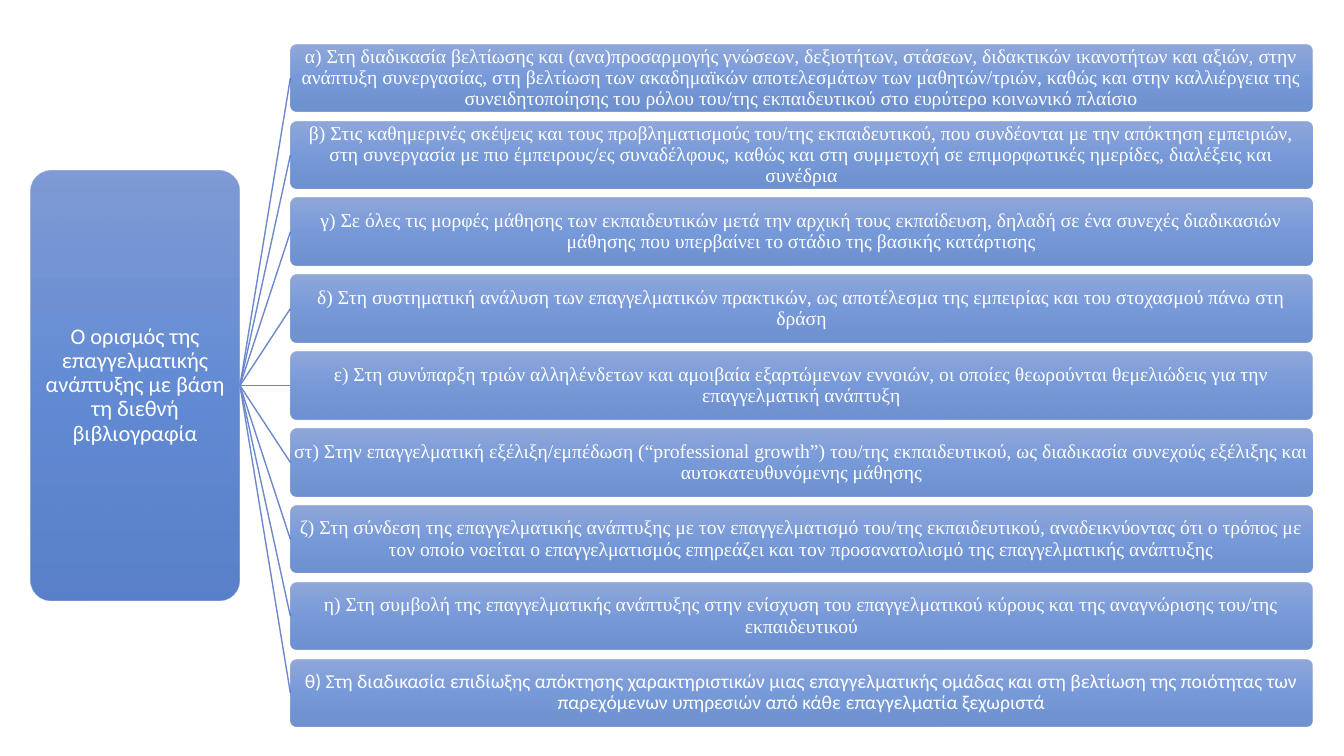
from lxml import etree
from pptx import Presentation
from pptx.dml.color import RGBColor
from pptx.enum import shapes, text
from pptx.oxml import ns
from pptx.util import Inches, Pt

TOPIC = "Ο ορισμός της επαγγελματικής ανάπτυξης με βάση τη διεθνή βιβλιογραφία"
DEFINITIONS = [
    "α) Στη διαδικασία βελτίωσης και (ανα)προσαρμογής γνώσεων, δεξιοτήτων, στάσεων, "
    "διδακτικών ικανοτήτων και αξιών, στην ανάπτυξη συνεργασίας, στη βελτίωση των "
    "ακαδημαϊκών αποτελεσμάτων των μαθητών/τριών, καθώς και στην καλλιέργεια της "
    "συνειδητοποίησης του ρόλου του/της εκπαιδευτικού στο ευρύτερο κοινωνικό πλαίσιο",
    "β) Στις καθημερινές σκέψεις και τους προβληματισμούς του/της εκπαιδευτικού, που "
    "συνδέονται με την απόκτηση εμπειριών, στη συνεργασία με πιο έμπειρους/ες "
    "συναδέλφους, καθώς και στη συμμετοχή σε επιμορφωτικές ημερίδες, διαλέξεις και συνέδρια",
    "γ) Σε όλες τις μορφές μάθησης των εκπαιδευτικών μετά την αρχική τους εκπαίδευση, "
    "δηλαδή σε ένα συνεχές διαδικασιών μάθησης που υπερβαίνει το στάδιο της βασικής κατάρτισης",
    "δ) Στη συστηματική ανάλυση των επαγγελματικών πρακτικών, ως αποτέλεσμα της "
    "εμπειρίας και του στοχασμού πάνω στη δράση",
    "ε) Στη συνύπαρξη τριών αλληλένδετων και αμοιβαία εξαρτώμενων εννοιών, οι οποίες "
    "θεωρούνται θεμελιώδεις για την επαγγελματική ανάπτυξη",
    "στ) Στην επαγγελματική εξέλιξη/εμπέδωση (“professional growth”) του/της "
    "εκπαιδευτικού, ως διαδικασία συνεχούς εξέλιξης και αυτοκατευθυνόμενης μάθησης",
    "ζ) Στη σύνδεση της επαγγελματικής ανάπτυξης με τον επαγγελματισμό του/της "
    "εκπαιδευτικού, αναδεικνύοντας ότι ο τρόπος με τον οποίο νοείται ο επαγγελματισμός "
    "επηρεάζει και τον προσανατολισμό της επαγγελματικής ανάπτυξης",
    "η) Στη συμβολή της επαγγελματικής ανάπτυξης στην ενίσχυση του επαγγελματικού "
    "κύρους και της αναγνώρισης του/της εκπαιδευτικού",
    "θ) Στη διαδικασία επιδίωξης απόκτησης χαρακτηριστικών μιας επαγγελματικής ομάδας "
    "και στη βελτίωση της ποιότητας των παρεχόμενων υπηρεσιών από κάθε επαγγελματία ξεχωριστά",
]

GRADIENT = [(0, "6183CB"), (50, "3E70CA"), (100, "3062BB")]
TOPIC_LEFT, TOPIC_TOP, TOPIC_WIDTH, TOPIC_HEIGHT = 0.3, 1.69, 2.08, 4.27
ROW_LEFT, ROW_WIDTH, ROW_HEIGHT = 2.88, 10.14, 0.67
FIRST_TOP, LAST_TOP = 0.44, 6.54


def color(value):
    return RGBColor.from_string(value)


def fill_gradient(box, opacity):
    """Fill from top to bottom with the three blues at one opacity percentage."""
    box.fill.gradient()
    box.fill.gradient_angle = 270
    stops = box._element.spPr.find(ns.qn("a:gradFill")).find(ns.qn("a:gsLst"))
    for stop in list(stops):
        stops.remove(stop)
    for position, value in GRADIENT:
        stop = etree.SubElement(stops, ns.qn("a:gs"), pos=str(position * 1000))
        shade = etree.SubElement(stop, ns.qn("a:srgbClr"), val=value)
        etree.SubElement(shade, ns.qn("a:alpha"), val=str(opacity * 1000))


def add_box(page, words, left, top, width, height, opacity, font, size):
    box = page.shapes.add_shape(
        shapes.MSO_SHAPE.ROUNDED_RECTANGLE,
        Inches(left), Inches(top), Inches(width), Inches(height))
    box.adjustments[0] = 0.1
    box.shadow.inherit = False
    box.line.fill.background()
    fill_gradient(box, opacity)
    frame = box.text_frame
    frame.word_wrap = True
    frame.vertical_anchor = text.MSO_ANCHOR.MIDDLE
    frame.margin_left = frame.margin_right = Inches(0.01)
    frame.margin_top = frame.margin_bottom = Inches(0.01)
    para = frame.paragraphs[0]
    para.text = words
    para.alignment = text.PP_ALIGN.CENTER
    para.line_spacing = 0.9
    para.font.name = font
    para.font.size = Pt(size)
    para.font.color.rgb = color("FFFFFF")


def add_branch(page, end_y):
    """Join the right edge of the topic to the left edge of a row."""
    branch = page.shapes.add_connector(
        shapes.MSO_CONNECTOR.STRAIGHT,
        Inches(TOPIC_LEFT + TOPIC_WIDTH), Inches(TOPIC_TOP + TOPIC_HEIGHT / 2),
        Inches(ROW_LEFT), Inches(end_y))
    branch.line.color.rgb = color("6D89CB")
    branch.line.width = Pt(1)
    etree.SubElement(branch._element.spPr, ns.qn("a:effectLst"))


def main():
    deck = Presentation()
    deck.slide_width, deck.slide_height = Inches(13.33), Inches(7.5)
    page = deck.slides.add_slide(deck.slide_layouts[6])

    add_box(page, TOPIC, TOPIC_LEFT, TOPIC_TOP, TOPIC_WIDTH, TOPIC_HEIGHT,
            80, "Calibri", 16)
    last = len(DEFINITIONS) - 1
    pitch = (LAST_TOP - FIRST_TOP) / last
    for index, definition in enumerate(DEFINITIONS):
        top = FIRST_TOP + index * pitch
        font = "Calibri" if index == last else "Times New Roman"
        add_branch(page, top + ROW_HEIGHT / 2)
        add_box(page, definition, ROW_LEFT, top, ROW_WIDTH, ROW_HEIGHT, 70, font, 14)

    deck.save("out.pptx")


if __name__ == "__main__":
    main()
